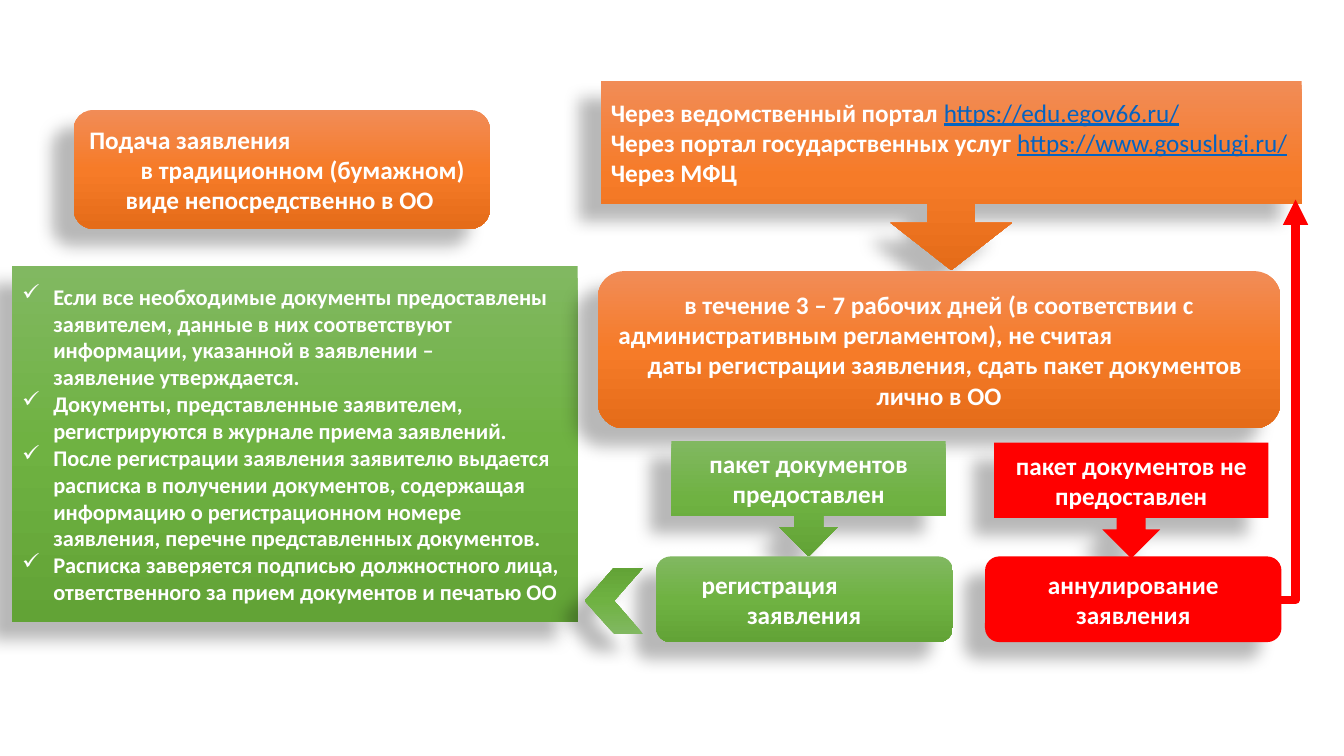
from lxml.etree import SubElement
from pptx import Presentation
from pptx.dml.color import RGBColor
from pptx.enum.shapes import MSO_CONNECTOR, MSO_SHAPE
from pptx.enum.text import MSO_ANCHOR, PP_ALIGN
from pptx.oxml.ns import qn
from pptx.util import Inches, Pt

WHITE = RGBColor(0xFF, 0xFF, 0xFF)
BLACK = RGBColor(0x00, 0x00, 0x00)
RED = RGBColor(0xFF, 0x00, 0x00)
LINK_BLUE = RGBColor(0x05, 0x63, 0xC1)
ORANGE = (RGBColor(0xF1, 0x8C, 0x57), RGBColor(0xF6, 0x7B, 0x28), RGBColor(0xE5, 0x6C, 0x19))
GREEN = (RGBColor(0x81, 0xB8, 0x61), RGBColor(0x6F, 0xB2, 0x42), RGBColor(0x62, 0xA3, 0x36))

ROUNDED = MSO_SHAPE.ROUNDED_RECTANGLE
CALLOUT = MSO_SHAPE.DOWN_ARROW_CALLOUT
HANGING = 0.31

# Content: each line is (left indent or None for centred, text, web address)
PAPER_LINES = [
    (0, "Подача заявления", ""),
    (0.51, "в традиционном (бумажном)", ""),
    (0.36, "виде непосредственно в ОО", ""),
]
PORTAL_LINES = [
    (0, "Через ведомственный портал ", "https://edu.egov66.ru/"),
    (0, "Через портал государственных услуг ", "https://www.gosuslugi.ru/"),
    (0, "Через МФЦ", ""),
]
DEADLINE_LINES = [
    (None, "в течение 3 – 7 рабочих дней (в соответствии с", ""),
    (0.03, "административным регламентом), не считая", ""),
    (0.32, "даты регистрации заявления, сдать пакет документов", ""),
    (None, "лично в ОО", ""),
]
REGISTRATION_LINES = [(0.31, "регистрация", ""), (0.76, "заявления", "")]
PROVIDED_LINES = [(None, "пакет документов предоставлен", "")]
MISSING_LINES = [(None, "пакет документов не предоставлен", "")]
CANCEL_LINES = [(None, "аннулирование заявления", "")]
RULES = [
    "Если все необходимые документы предоставлены заявителем, данные в них "
    "соответствуют информации, указанной в заявлении –\vзаявление утверждается.",
    "Документы, представленные заявителем, регистрируются в журнале приема заявлений.",
    "После регистрации заявления заявителю выдается расписка в получении документов, "
    "содержащая информацию о регистрационном номере заявления, перечне представленных документов.",
    "Расписка заверяется подписью должностного лица, ответственного за прием "
    "документов и печатью ОО",
]
RULE_LINES = [(HANGING, rule, "") for rule in RULES]

# Shapes from back to front: kind, (left, top, width, height), fill, lines, text size
STEPS = [
    (ROUNDED, (0.73, 1.09, 4.13, 1.18), ORANGE, PAPER_LINES, 18),
    (MSO_SHAPE.RECTANGLE, (0.12, 2.64, 5.61, 3.53), GREEN, RULE_LINES, 16),
    (CALLOUT, (5.96, 0.8, 6.95, 1.88), ORANGE, PORTAL_LINES, 18),
    (ROUNDED, (5.93, 2.69, 6.77, 1.56), ORANGE, DEADLINE_LINES, 18),
    (CALLOUT, (9.86, 4.39, 2.72, 1.15), RED, MISSING_LINES, 18),
    (CALLOUT, (6.66, 4.37, 2.72, 1.15), GREEN, PROVIDED_LINES, 18),
    (ROUNDED, (9.77, 5.52, 2.94, 0.85), RED, CANCEL_LINES, 18),
    (ROUNDED, (6.51, 5.52, 2.94, 0.85), GREEN, REGISTRATION_LINES, 18),
    (MSO_SHAPE.CHEVRON, (5.8, 5.63, 0.58, 0.66), GREEN, [], 18),
]


def add_gradient(properties, colors):
    gradient = SubElement(properties, qn("a:gradFill"), rotWithShape="1")
    stops = SubElement(gradient, qn("a:gsLst"))
    for position, color in zip((0, 50000, 100000), colors):
        stop = SubElement(stops, qn("a:gs"), pos=str(position))
        SubElement(stop, qn("a:srgbClr"), val=str(color))
    SubElement(gradient, qn("a:lin"), ang="5400000", scaled="0")


def add_shadow(properties):
    effects = SubElement(properties, qn("a:effectLst"))
    shadow = SubElement(effects, qn("a:outerShdw"), blurRad=str(Pt(11.8)),
                        dist=str(Pt(19.7)), dir="8460000", rotWithShape="0")
    color = SubElement(shadow, qn("a:srgbClr"), val=str(BLACK))
    SubElement(color, qn("a:alpha"), val="28000")


def write_lines(frame, lines, size):
    frame.word_wrap = True
    frame.vertical_anchor = MSO_ANCHOR.MIDDLE
    for number, (indent, text, address) in enumerate(lines):
        para = frame.add_paragraph() if number else frame.paragraphs[0]
        para.text = text
        para.alignment = PP_ALIGN.CENTER if indent is None else PP_ALIGN.LEFT
        settings = para._p.get_or_add_pPr()
        settings.set("marL", str(Inches(indent or 0)))
        if lines is RULE_LINES:
            settings.set("indent", str(-Inches(HANGING)))
            SubElement(settings, qn("a:buChar"), char="✓")
        if address:
            para.add_run().text = address
        for span in para.runs:
            is_link = span.text == address
            span.font.name = "Calibri"
            span.font.size = Pt(size)
            span.font.bold = not is_link
            span.font.underline = is_link
            span.font.color.rgb = LINK_BLUE if is_link else WHITE


def add_step(page, kind, place, fill, lines, size):
    box = page.shapes.add_shape(kind, *map(Inches, place))
    properties = box._element.spPr
    if isinstance(fill, RGBColor):
        box.fill.solid()
        box.fill.fore_color.rgb = fill
    else:
        add_gradient(properties, fill)
    box.line.fill.background()
    add_shadow(properties)
    if lines:
        write_lines(box.text_frame, lines, size)
    if lines is PORTAL_LINES:
        for index, value in enumerate((0.25, 0.32, 0.25, 0.65)):
            box.adjustments[index] = value
    if kind == MSO_SHAPE.CHEVRON:
        box.rotation = 180


def add_return_arrow(page):
    # Elbow turned a quarter: short step right, then up to the portals
    arrow = page.shapes.add_connector(
        MSO_CONNECTOR.ELBOW, Inches(14.69), Inches(4.12), Inches(10.71), Inches(3.82))
    arrow.line.color.rgb = RED
    arrow.line.width = Pt(6)
    properties = arrow._element.spPr
    properties.find(qn("a:xfrm")).set("rot", "5400000")
    guides = properties.find(qn("a:prstGeom")).find(qn("a:avLst"))
    SubElement(guides, qn("a:gd"), name="adj1", fmla="val 200")
    SubElement(properties.find(qn("a:ln")), qn("a:tailEnd"), type="triangle")
    SubElement(properties, qn("a:effectLst"))


def main():
    deck = Presentation()
    deck.slide_width, deck.slide_height = Inches(13.33), Inches(7.5)
    page = deck.slides.add_slide(deck.slide_layouts[6])
    for step in STEPS:
        add_step(page, *step)
    add_return_arrow(page)
    deck.save("out.pptx")


if __name__ == "__main__":
    main()
